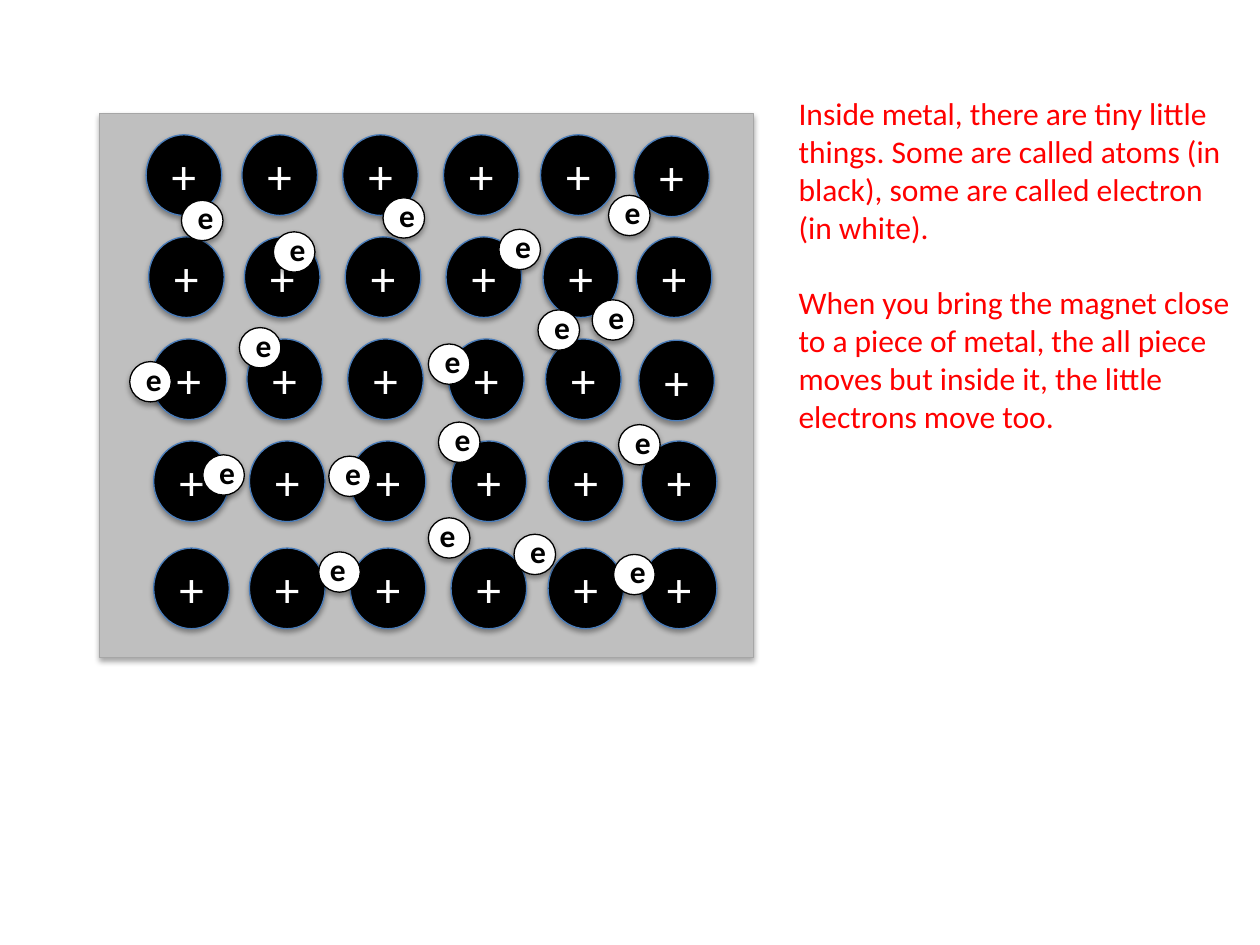
from dataclasses import dataclass
from itertools import product

from lxml import etree
from pptx import Presentation
from pptx.dml.color import RGBColor
from pptx.enum.shapes import MSO_SHAPE
from pptx.enum.text import MSO_ANCHOR, MSO_AUTO_SIZE, PP_ALIGN
from pptx.oxml.ns import qn
from pptx.util import Inches, Pt

RECTANGLE = MSO_SHAPE.RECTANGLE
OVAL = MSO_SHAPE.OVAL
MIDDLE = MSO_ANCHOR.MIDDLE
CENTER = PP_ALIGN.CENTER
LEFT = PP_ALIGN.LEFT
GROW = MSO_AUTO_SIZE.SHAPE_TO_FIT_TEXT

SLIDE_WIDTH = Inches(10)
SLIDE_HEIGHT = Inches(7.5)
GRID_COLUMNS = 1000
GRID_ROWS = 750

ATOM_COLUMNS = (116, 192, 272, 352, 429, 503)
ATOM_ROWS = ((107, 0), (188, 2), (269, 4), (350, 6), (435, 6))
LAST_COLUMN_DROP = {107: 1, 269: 1}


@dataclass(frozen=True)
class Box:
    column: float
    row: float
    columns: float
    rows: float

    def lengths(self) -> tuple[int, int, int, int]:
        return (
            round(SLIDE_WIDTH * self.column / GRID_COLUMNS),
            round(SLIDE_HEIGHT * self.row / GRID_ROWS),
            round(SLIDE_WIDTH * self.columns / GRID_COLUMNS),
            round(SLIDE_HEIGHT * self.rows / GRID_ROWS),
        )


@dataclass(frozen=True)
class Electron:
    column: int
    row: int
    label_shift: int = 3


@dataclass(frozen=True)
class TextStyle:
    size: int
    color: str
    bold: bool = False
    alignment: PP_ALIGN = LEFT


ELECTRONS = (
    Electron(340, 411, -1),
    Electron(348, 335),
    Electron(483, 155),
    Electron(304, 157),
    Electron(144, 159),
    Electron(190, 260),
    Electron(161, 361),
    Electron(491, 337),
    Electron(427, 246),
    Electron(253, 438, -1),
    Electron(261, 362),
    Electron(396, 182),
    Electron(217, 184),
    Electron(470, 238),
    Electron(103, 287),
    Electron(487, 440),
    Electron(408, 424),
    Electron(340, 273),
)
ATOM_STYLE = TextStyle(28, "FFFFFF", alignment=CENTER)
ELECTRON_STYLE = TextStyle(18, "000000", bold=True)
STORY_STYLE = TextStyle(18, "FF0000")
STORY = (
    ("Inside metal, there are tiny little", 0),
    ("things. Some are called atoms (in black), some are called electron (in white).", 21.6),
    (
        "When you bring the magnet close to a piece of metal, the all piece moves "
        "but inside it, the little electrons move too.",
        0,
    ),
)


def color(value: str) -> RGBColor:
    return RGBColor.from_string(value)


def add_shadow(shape) -> None:
    shape.shadow.inherit = False
    effects = shape._element.spPr.find(qn("a:effectLst"))
    shadow = etree.SubElement(
        effects, qn("a:outerShdw"), blurRad="40000", dist="23000", dir="5400000", rotWithShape="0"
    )
    black = etree.SubElement(shadow, qn("a:srgbClr"), val="000000")
    etree.SubElement(black, qn("a:alpha"), val="35000")


def add_figure(shapes, kind: MSO_SHAPE, box: Box, fill: str, line: str):
    shape = shapes.add_shape(kind, *box.lengths())
    shape.fill.solid()
    shape.fill.fore_color.rgb = color(fill)
    shape.line.color.rgb = color(line)
    shape.line.width = Pt(0.75)
    add_shadow(shape)
    return shape


def write(paragraph, text: str, style: TextStyle, space_after: float = 0) -> None:
    run = paragraph.add_run()
    run.text = text
    font_format = {"name": "Calibri", "size": Pt(style.size), "bold": style.bold}
    for name, value in font_format.items():
        setattr(run.font, name, value)
    run.font.color.rgb = color(style.color)
    paragraph.alignment = style.alignment
    if space_after:
        paragraph.space_after = Pt(space_after)


def add_text_box(shapes, box: Box, wrap: bool):
    text_frame = shapes.add_textbox(*box.lengths()).text_frame
    for name, value in {"word_wrap": wrap, "auto_size": GROW}.items():
        setattr(text_frame, name, value)
    return text_frame


def add_atoms(slide) -> None:
    group = slide.shapes.add_group_shape()
    for (row, shift), column in product(ATOM_ROWS, ATOM_COLUMNS):
        drop = LAST_COLUMN_DROP.get(row, 0) if column == ATOM_COLUMNS[-1] else 0
        box = Box(column + shift, row + drop, 60, 64)
        atom = add_figure(group.shapes, OVAL, box, "000000", "4B7EBC")
        atom.text_frame.vertical_anchor = MIDDLE
        write(atom.text_frame.paragraphs[0], "+", ATOM_STYLE)


def add_electron(slide, electron: Electron) -> None:
    group = slide.shapes.add_group_shape()
    body = Box(electron.column, electron.row, 33, 32)
    add_figure(group.shapes, OVAL, body, "FFFFFF", "000000")
    label = Box(electron.column + electron.label_shift, electron.row - 6.5, 33, 40)
    text_frame = add_text_box(group.shapes, label, False)
    write(text_frame.paragraphs[0], "e", ELECTRON_STYLE)


def add_story(slide) -> None:
    text_frame = add_text_box(slide.shapes, Box(624, 70, 363, 283), True)
    for index, (text, space_after) in enumerate(STORY):
        paragraph = text_frame.add_paragraph() if index else text_frame.paragraphs[0]
        write(paragraph, text, STORY_STYLE, space_after)


def main() -> None:
    presentation = Presentation()
    presentation.slide_width = SLIDE_WIDTH
    presentation.slide_height = SLIDE_HEIGHT
    slide = presentation.slides.add_slide(presentation.slide_layouts[6])
    add_figure(slide.shapes, RECTANGLE, Box(79, 90, 519, 432), "BFBFBF", "A6A6A6")
    add_atoms(slide)
    for electron in ELECTRONS:
        add_electron(slide, electron)
    add_story(slide)
    presentation.save("out.pptx")


if __name__ == "__main__":
    main()
